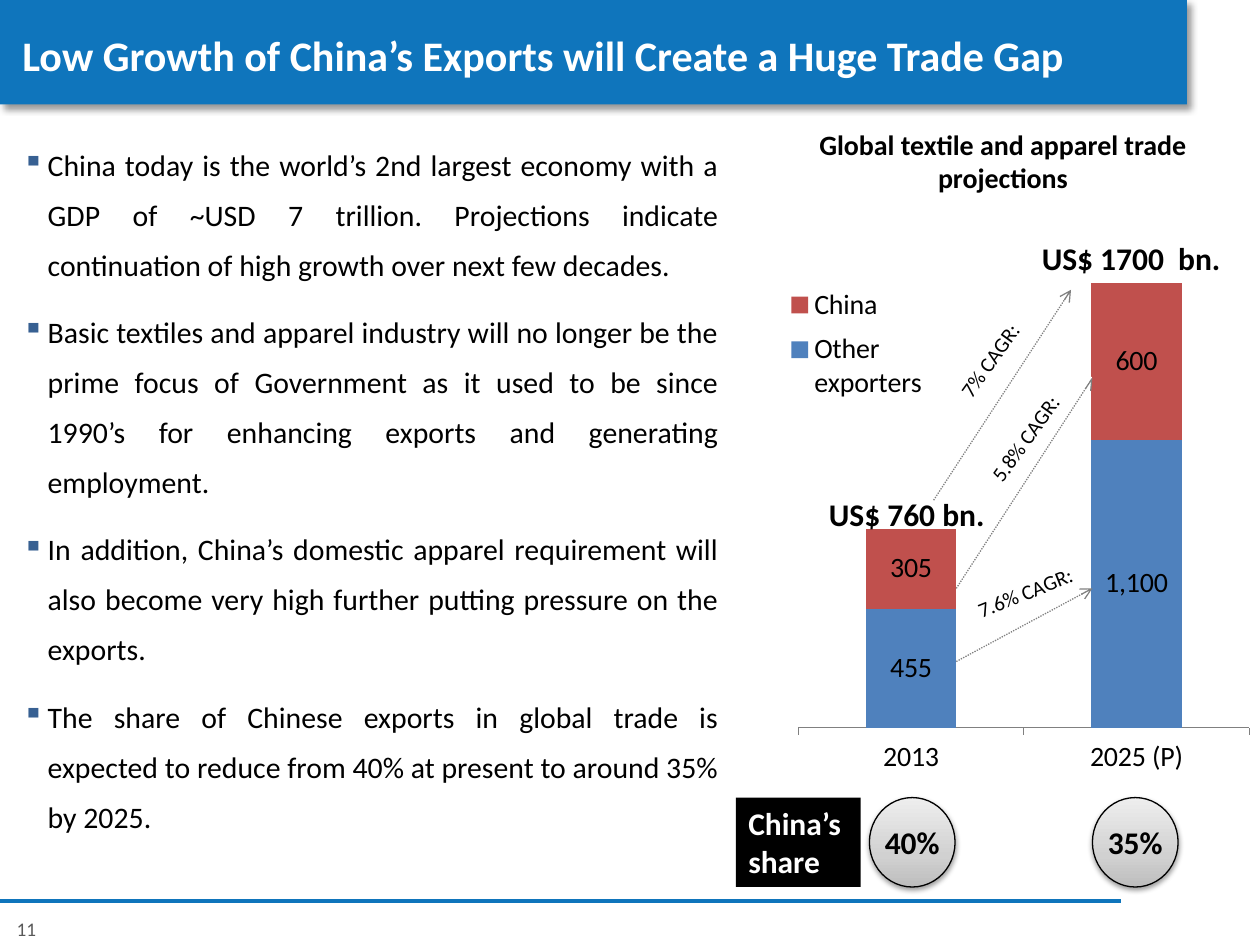
"""Build the slide on the trade gap left by slow growth of China's exports."""
from copy import deepcopy

from lxml.etree import SubElement
from pptx import Presentation
from pptx.chart.data import CategoryChartData
from pptx.dml.color import RGBColor
from pptx.enum.chart import XL_CHART_TYPE, XL_LEGEND_POSITION, XL_TICK_LABEL_POSITION, XL_TICK_MARK
from pptx.enum.dml import MSO_LINE
from pptx.enum.shapes import MSO_CONNECTOR, MSO_SHAPE
from pptx.enum.text import MSO_ANCHOR, PP_ALIGN
from pptx.oxml.ns import qn
from pptx.util import Inches, Pt

FONT = "Calibri"
COLORS = {
    "brand": "0F75BC", "black": "000000", "white": "FFFFFF", "number": "595959",
    "bullet": "376092", "arrow": "808080", "others": "4F81BD", "china": "C0504D",
}
BADGE_STOPS = [(0, "BDBDBD"), (0.35, "D1D1D1"), (1, "EEEEEE")]

TITLE = "Low Growth of China’s Exports will Create a Huge Trade Gap"
POINTS = [
    "China today is the world’s 2nd largest economy with a GDP of ~USD 7 trillion. "
    "Projections indicate continuation of high growth over next few decades.",
    "Basic textiles and apparel industry will no longer be the prime focus of Government "
    "as it used to be since 1990’s for enhancing exports and generating employment.",
    "In addition, China’s domestic apparel requirement will also become very high further "
    "putting pressure on the exports.",
    "The share of Chinese exports in global trade is expected to reduce from 40% at present "
    "to around 35% by 2025.",
]
CHART_TITLE = "Global textile and apparel trade projections"
YEARS = ["2013", "2025 (P)"]
EXPORTS = [("Other exporters", (455, 1100), "others"), ("China", (305, 600), "china")]
TOTALS = [("US$ 760 bn.", (6.48, 3.88, 1.62, 0.4)), ("US$ 1700  bn.", (8.17, 1.85, 1.83, 0.4))]
SHARES = [("40%", 6.9), ("35%", 8.67)]
GROWTH_ARROWS = [
    ((7.59, 5.25), (8.67, 4.67)),
    ((7.59, 4.67), (8.67, 3)),
    ((7.41, 3.97), (8.5, 2.3)),
]
GROWTH_RATES = [
    ("7% CAGR:", 7.15, 2.71, 305.7, "white"),
    ("5.8% CAGR:", 7.43, 3.33, 305.7, "white"),
    ("7.6% CAGR:", 7.43, 4.55, 338.1, None),
]
CHART_BOX = (5.92, 1.89, 4, 4.44)
PLOT_LAYOUT = (0.104, 0.034, 0.896, 0.841)
LEGEND_LAYOUT = (0.06, 0.07, 0.32, 0.24)


def rgb(name):
    return RGBColor.from_string(COLORS[name])


def inches(box):
    return [Inches(length) for length in box]


def style_font(font, size, color="black", bold=False):
    font.name, font.size, font.bold = FONT, Pt(size), bold
    font.color.rgb = rgb(color)


def write(shape, text, size, color="black", bold=False, align=PP_ALIGN.LEFT, anchor=MSO_ANCHOR.TOP):
    frame = shape.text_frame
    frame.word_wrap = True
    frame.vertical_anchor = anchor
    frame.text = text
    for paragraph in frame.paragraphs:
        paragraph.alignment = align
        for run in paragraph.runs:
            style_font(run.font, size, color, bold)
    return frame


def add_text(slide, box, text, size, **style):
    label = slide.shapes.add_textbox(*inches(box))
    write(label, text, size, **style)
    return label


def add_block(slide, kind, box, fill=None):
    block = slide.shapes.add_shape(kind, *inches(box))
    block.shadow.inherit = False
    block.line.fill.background()
    if fill:
        block.fill.solid()
        block.fill.fore_color.rgb = rgb(fill)
    return block


def add_shadow(shape, opacity, blur, distance, angle):
    effects = shape._element.spPr.find(qn("a:effectLst"))
    shadow = SubElement(effects, qn("a:outerShdw"), blurRad=str(Pt(blur)), dist=str(Pt(distance)),
                        dir=str(angle * 60000), algn="t", rotWithShape="0")
    color = SubElement(shadow, qn("a:srgbClr"), val=COLORS["black"])
    SubElement(color, qn("a:alpha"), val=str(opacity * 1000))


def add_line(slide, start, end, color, width, arrow=False):
    line = slide.shapes.add_connector(MSO_CONNECTOR.STRAIGHT, *inches(start + end))
    line.line.color.rgb = rgb(color)
    line.line.width = Pt(width)
    if arrow:
        line.line.dash_style = MSO_LINE.ROUND_DOT
        SubElement(line.line._get_or_add_ln(), qn("a:tailEnd"), type="arrow")
    SubElement(line._element.spPr, qn("a:effectLst"))


def add_points(slide):
    body = slide.shapes.add_textbox(*inches((0.08, 1, 5.72, 6)))
    frame = write(body, "\n".join(POINTS), 17, align=PP_ALIGN.JUSTIFY)
    for index, paragraph in enumerate(frame.paragraphs):
        properties = paragraph._p.get_or_add_pPr()
        properties.set("marL", str(Inches(0.2)))
        properties.set("indent", str(-Inches(0.2)))
        bullet_color = SubElement(properties, qn("a:buClr"))
        SubElement(bullet_color, qn("a:srgbClr"), val=COLORS["bullet"])
        SubElement(properties, qn("a:buChar"), char="▪")
        paragraph.line_spacing = 1.4
        paragraph.space_before = Pt(10 if index else 0)


def place(element, box, inner=False):
    for old in element.findall(qn("c:layout")):
        element.remove(old)
    layout = element.makeelement(qn("c:layout"))
    manual = SubElement(layout, qn("c:manualLayout"))
    settings = [("layoutTarget", "inner")] if inner else []
    settings += [("xMode", "edge"), ("yMode", "edge"), *zip("xywh", box)]
    for tag, value in settings:
        SubElement(manual, qn(f"c:{tag}"), val=str(value))
    element.insert(0 if inner else 1, layout)


def add_exports_chart(slide):
    data = CategoryChartData(number_format="#,##0")
    data.categories = YEARS
    for name, values, _ in EXPORTS:
        data.add_series(name, values)
    chart = slide.shapes.add_chart(XL_CHART_TYPE.COLUMN_STACKED, *inches(CHART_BOX), data).chart
    chart.has_title = False
    style_font(chart.font, 16)
    chart.has_legend = True
    chart.legend.position = XL_LEGEND_POSITION.RIGHT
    chart.legend.include_in_layout = False
    place(chart.legend._element, LEGEND_LAYOUT)
    place(chart._chartSpace.chart.plotArea, PLOT_LAYOUT, inner=True)

    chart.value_axis.visible = False
    chart.value_axis.has_major_gridlines = False
    chart.value_axis.minimum_scale, chart.value_axis.maximum_scale = 0, 1800
    years = chart.category_axis
    years.major_tick_mark = XL_TICK_MARK.OUTSIDE
    years.tick_label_position = XL_TICK_LABEL_POSITION.LOW
    years.format.line.color.rgb = rgb("arrow")

    plot = chart.plots[0]
    plot.gap_width, plot.overlap, plot.vary_by_categories = 150, 100, False
    for series, (_, _, color) in zip(plot.series, EXPORTS):
        series.format.fill.solid()
        series.format.fill.fore_color.rgb = rgb(color)
        series.data_labels.show_value = True
        series.data_labels.number_format = "#,##0"
        series.data_labels.number_format_is_linked = False
        style_font(series.data_labels.font, 16)


def add_share_badge(slide, share, left):
    badge = add_block(slide, MSO_SHAPE.OVAL, (left, 6.33, 0.68, 0.71))
    badge.fill.gradient()
    badge.fill.gradient_angle = 90
    stop_list = badge._element.spPr.find(".//" + qn("a:gsLst"))
    stop_list.insert(1, deepcopy(stop_list[0]))
    for stop, (position, color) in zip(badge.fill.gradient_stops, BADGE_STOPS):
        stop.position = position
        stop.color.rgb = RGBColor.from_string(color)
    badge.line.color.rgb = rgb("black")
    badge.line.width = Pt(0.75)
    add_shadow(badge, 38, 3.1, 1.6, 90)
    frame = write(badge, share, 18, bold=True, align=PP_ALIGN.CENTER, anchor=MSO_ANCHOR.MIDDLE)
    frame.margin_left = frame.margin_right = 0


def main():
    deck = Presentation()
    deck.slide_width, deck.slide_height = Inches(10), Inches(7.5)
    slide = deck.slides.add_slide(deck.slide_layouts[6])

    banner = add_block(slide, MSO_SHAPE.RECTANGLE, (0, 0, 9.42, 0.83), "brand")
    add_shadow(banner, 40, 4, 3, 45)
    add_line(slide, (0, 7.15), (8.9, 7.15), "brand", 2.25)
    add_text(slide, (0, 7.23, 0.42, 0.29), "11", 11, color="number", align=PP_ALIGN.CENTER)
    add_points(slide)
    add_text(slide, (0.08, 0.17, 9.27, 0.53), TITLE, 24, color="white", bold=True, anchor=MSO_ANCHOR.MIDDLE)
    add_text(slide, (5.92, 0.96, 4.08, 0.64), CHART_TITLE, 16, bold=True, align=PP_ALIGN.CENTER)
    share_heading = add_block(slide, MSO_SHAPE.RECTANGLE, (5.84, 6.33, 0.99, 0.71), "black")
    write(share_heading, "China’s\nshare", 18, "white", bold=True)
    add_exports_chart(slide)
    for share, left in SHARES:
        add_share_badge(slide, share, left)
    for start, end in GROWTH_ARROWS:
        add_line(slide, start, end, "arrow", 0.75, arrow=True)
    for rate, left, top, angle, fill in GROWTH_RATES:
        label = add_text(slide, (left, top, 1.41, 0.3), rate, 12, align=PP_ALIGN.CENTER)
        label.rotation = angle
        if fill:
            label.fill.solid()
            label.fill.fore_color.rgb = rgb(fill)
    for total, box in TOTALS:
        add_text(slide, box, total, 18, bold=True)
    deck.save("out.pptx")


if __name__ == "__main__":
    main()
